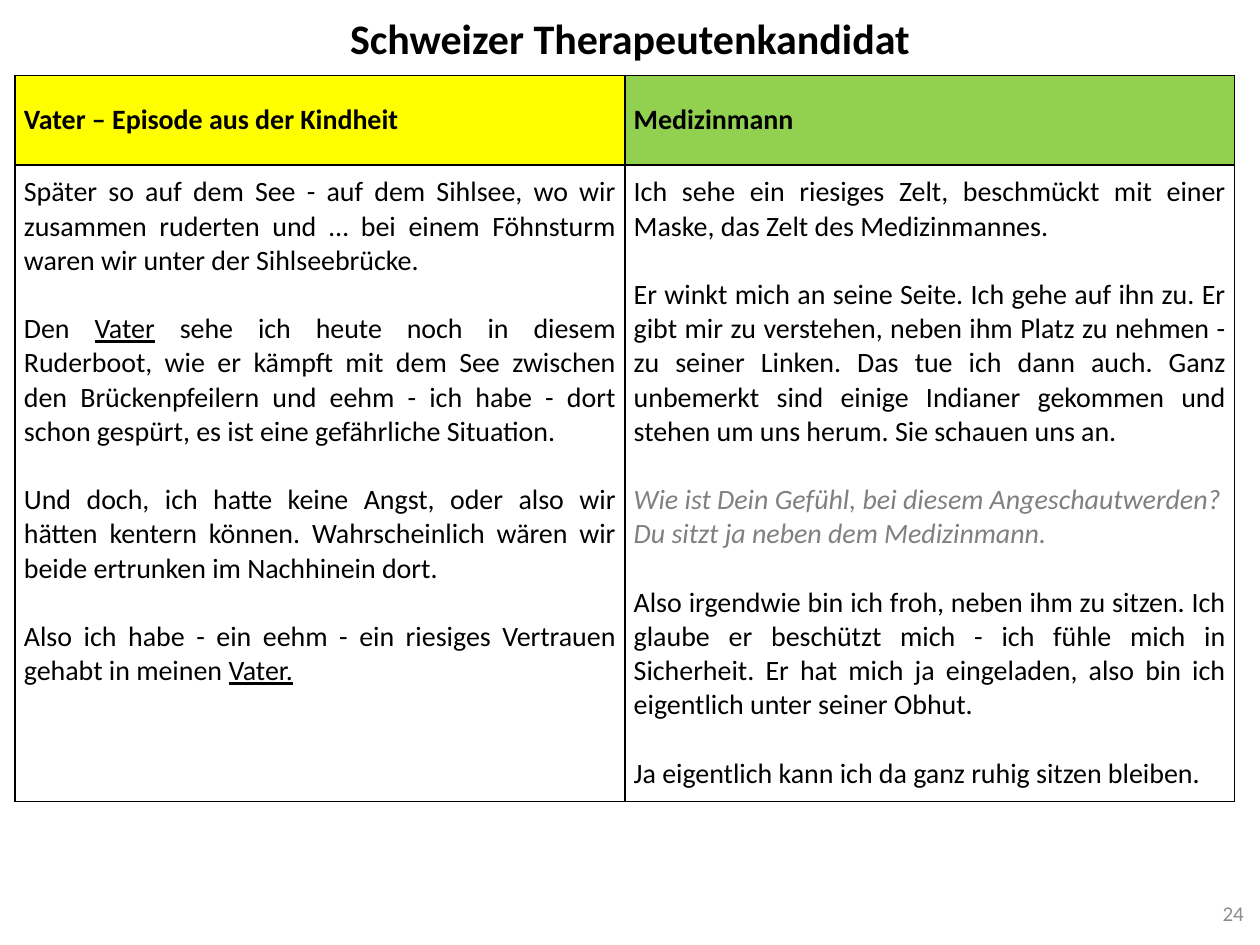
"""Build the slide comparing a childhood episode with the medicine man scene."""
from lxml import etree
from pptx import Presentation
from pptx import util as u
from pptx.dml.color import RGBColor
from pptx.enum import text
from pptx.oxml.ns import qn

TITLE = "Schweizer Therapeutenkandidat"
PAGE_NUMBER = "24"
HEADERS = [("Vater – Episode aus der Kindheit", "FFFF00"), ("Medizinmann", "92D050")]
PLAIN, UNDERLINED = {}, {"underline": True}
QUESTION = {"italic": True, "color": "808080"}
STORIES = [
    [
        [("Später so auf dem See - auf dem Sihlsee, wo wir zusammen ruderten und … bei einem "
          "Föhnsturm waren wir unter der Sihlseebrücke.", PLAIN)],
        [("Den ", PLAIN), ("Vater", UNDERLINED),
         (" sehe ich heute noch in diesem Ruderboot, wie er kämpft mit dem See zwischen den "
          "Brückenpfeilern und eehm - ich habe - dort schon gespürt, es ist eine gefährliche "
          "Situation.", PLAIN)],
        [("Und doch, ich hatte keine Angst, oder also wir hätten kentern können. "
          "Wahrscheinlich wären wir beide ertrunken im Nachhinein dort.", PLAIN)],
        [("Also ich habe - ein eehm - ein riesiges Vertrauen gehabt in meinen ", PLAIN),
         ("Vater.", UNDERLINED)],
    ],
    [
        [("Ich sehe ein riesiges Zelt, beschmückt mit einer Maske, das Zelt des "
          "Medizinmannes.", PLAIN)],
        [("Er winkt mich an seine Seite. Ich gehe auf ihn zu. Er gibt mir zu verstehen, neben "
          "ihm Platz zu nehmen - zu seiner Linken. Das tue ich dann auch. Ganz unbemerkt sind "
          "einige Indianer gekommen und stehen um uns herum. Sie schauen uns an.", PLAIN)],
        [("Wie ist Dein Gefühl, bei diesem Angeschautwerden? Du sitzt ja neben dem "
          "Medizinmann.", QUESTION)],
        [("Also irgendwie bin ich froh, neben ihm zu sitzen. Ich glaube er beschützt mich - ich "
          "fühle mich in Sicherheit. Er hat mich ja eingeladen, also bin ich eigentlich unter "
          "seiner Obhut.", PLAIN)],
        [("Ja eigentlich kann ich da ganz ruhig sitzen bleiben.", PLAIN)],
    ],
]
COLUMN_WIDTH = 4.84
ROW_HEIGHTS = [0.71, 5.05]
PARAGRAPH_GAP = 19.5


def rgb(value):
    return RGBColor.from_string(value)


def add_text(para, words, size=16, color="000000", bold=False, italic=False, underline=False):
    span = para.add_run()
    span.text = words
    font = span.font
    font.name, font.size, font.color.rgb = "Calibri", u.Pt(size), rgb(color)
    font.bold, font.italic, font.underline = bold, italic, underline


def place(shape, left, top, width, height):
    shape.left, shape.top = u.Inches(left), u.Inches(top)
    shape.width, shape.height = u.Inches(width), u.Inches(height)


def format_cell(cell, fill=None):
    cell.margin_left = cell.margin_right = u.Inches(0.07)
    cell.margin_top = cell.margin_bottom = u.Inches(0.08)
    properties = cell._tc.get_or_add_tcPr()
    for side in ("a:lnL", "a:lnR", "a:lnT", "a:lnB"):
        line = etree.SubElement(properties, qn(side), w=str(u.Pt(1)))
        solid = etree.SubElement(line, qn("a:solidFill"))
        etree.SubElement(solid, qn("a:srgbClr"), val="000000")
    if fill:
        cell.fill.solid()
        cell.fill.fore_color.rgb = rgb(fill)
    else:
        cell.fill.background()


def add_title(page):
    title = page.shapes.title
    place(title, 0, 0, 10, 0.6)
    title.text_frame.vertical_anchor = text.MSO_ANCHOR.MIDDLE
    para = title.text_frame.paragraphs[0]
    para.alignment = text.PP_ALIGN.CENTER
    add_text(para, TITLE, size=24, bold=True)


def add_comparison(page):
    frame = page.shapes.add_table(2, 2, u.Inches(0.12), u.Inches(0.6),
                                  u.Inches(2 * COLUMN_WIDTH), u.Inches(sum(ROW_HEIGHTS)))
    table = frame.table
    table.first_row = table.horz_banding = False
    for row, height in zip(table.rows, ROW_HEIGHTS):
        row.height = u.Inches(height)
    for column, ((heading, fill), story) in enumerate(zip(HEADERS, STORIES)):
        table.columns[column].width = u.Inches(COLUMN_WIDTH)
        header, body = table.cell(0, column), table.cell(1, column)
        format_cell(header, fill)
        format_cell(body)
        header.vertical_anchor = text.MSO_ANCHOR.MIDDLE
        para = header.text_frame.paragraphs[0]
        para.alignment = text.PP_ALIGN.JUSTIFY
        add_text(para, heading, bold=True)
        for index, spans in enumerate(story):
            para = body.text_frame.add_paragraph() if index else body.text_frame.paragraphs[0]
            is_question = spans[0][1] is QUESTION
            para.alignment = text.PP_ALIGN.LEFT if is_question else text.PP_ALIGN.JUSTIFY
            para.space_before = u.Pt(PARAGRAPH_GAP if index else 0)
            for words, style in spans:
                add_text(para, words, **style)


def add_page_number(page):
    box = page.shapes.add_textbox(0, 0, 0, 0)
    place(box, 9.56, 7.05, 0.41, 0.4)
    box.text_frame.word_wrap = True
    box.text_frame.vertical_anchor = text.MSO_ANCHOR.MIDDLE
    para = box.text_frame.paragraphs[0]
    para.alignment = text.PP_ALIGN.RIGHT
    add_text(para, PAGE_NUMBER, size=12, color="8C8C8C")


def main():
    deck = Presentation()
    deck.slide_width, deck.slide_height = u.Inches(10), u.Inches(7.5)
    page = deck.slides.add_slide(deck.slide_layouts[5])
    add_title(page)
    add_comparison(page)
    add_page_number(page)
    deck.save("out.pptx")


if __name__ == "__main__":
    main()
